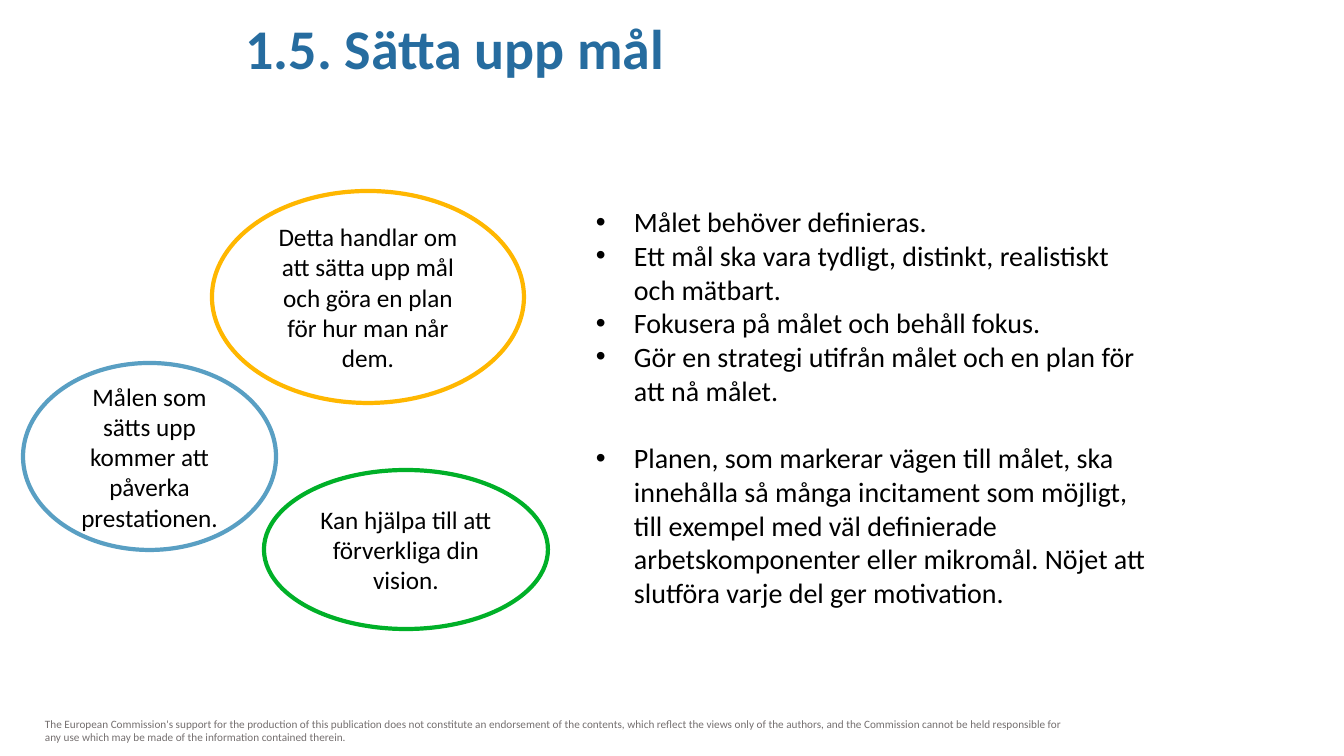
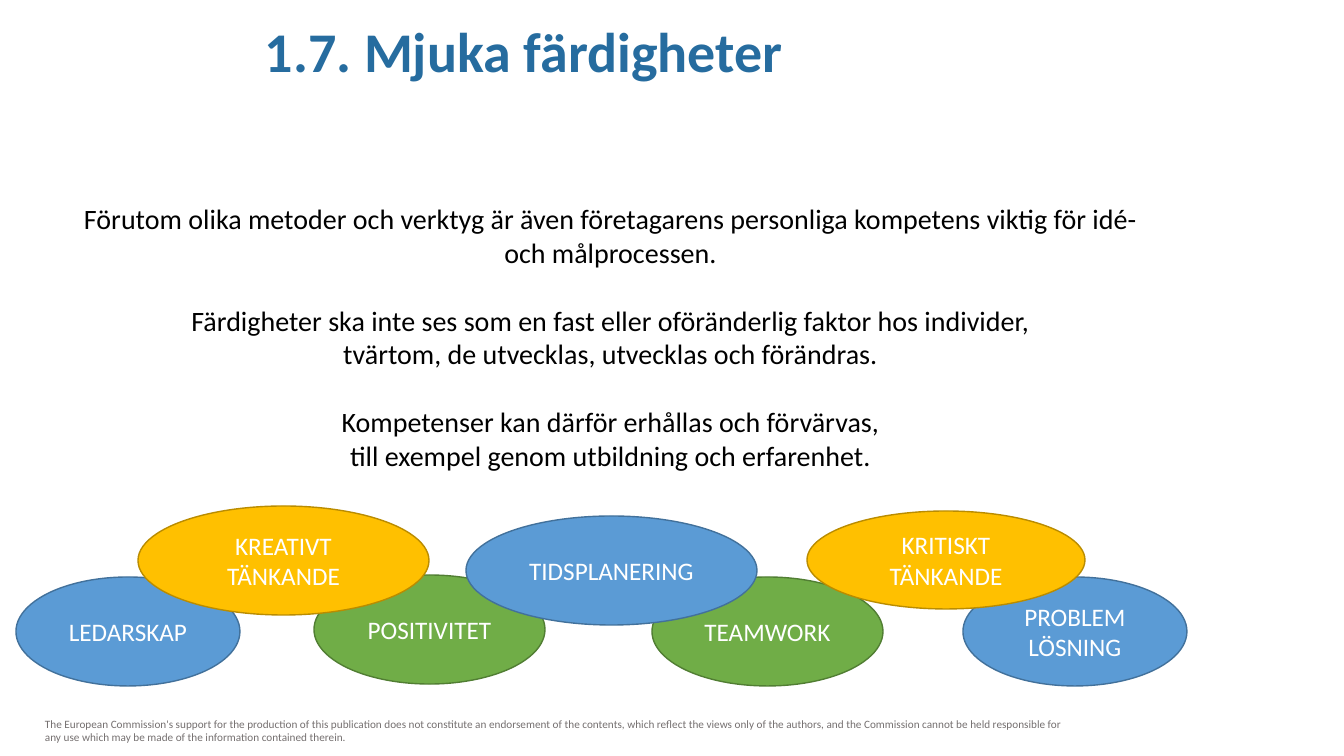
"""Build two Swedish training slides on setting goals and on soft skills."""
from lxml import etree
from pptx import Presentation
from pptx.dml.color import RGBColor
from pptx.enum.shapes import MSO_SHAPE
from pptx.enum.text import MSO_ANCHOR, PP_ALIGN
from pptx.oxml.ns import qn
from pptx.util import Pt

EMU_PER_PX = 914400 / 100.8
SLIDE_SIZE = (1344, 756)
BLANK_LAYOUT = 6
ELLIPSE = MSO_SHAPE.OVAL
MIDDLE = MSO_ANCHOR.MIDDLE
LEFT, CENTER = PP_ALIGN.LEFT, PP_ALIGN.CENTER

FONT = "Calibri"
BODY_SIZE = 20
BODY_GAP = 24.4
BULLET_INDENT = 38
COLORS = {
    "title": "266C9F",
    "text": "000000",
    "footer": "757070",
    "white": "FFFFFF",
    "goal_green": "00B028",
    "goal_blue": "599FC3",
    "goal_yellow": "FFB700",
    "green": "70AD47",
    "green_edge": "517E33",
    "blue": "5B9BD5",
    "blue_edge": "42719B",
    "yellow": "FFC000",
    "yellow_edge": "BA8C00",
}
FOOTER = (
    "The European Commission's support for the production of this publication does not "
    "constitute an endorsement of the contents, which reflect the views only of the authors, "
    "and the Commission cannot be held responsible for any use which may be made of the "
    "information contained therein."
)

GOAL_POINTS = [
    "Målet behöver definieras.",
    "Ett mål ska vara tydligt, distinkt, realistiskt och mätbart.",
    "Fokusera på målet och behåll fokus.",
    "Gör en strategi utifrån målet och en plan för att nå målet.",
    "Planen, som markerar vägen till målet, ska innehålla så många incitament som möjligt, "
    "till exempel med väl definierade arbetskomponenter eller mikromål. Nöjet att slutföra "
    "varje del ger motivation.",
]
GOAL_BUBBLES = [
    ("Kan hjälpa till att förverkliga din vision.", (264, 470, 284, 159), "goal_green"),
    ("Målen som sätts upp kommer att påverka prestationen.", (23, 363, 253, 187), "goal_blue"),
    ("Detta handlar om att sätta upp mål och göra en plan för hur man når dem.",
     (212, 191, 312, 212), "goal_yellow"),
]
SKILL_TEXT = [
    "Förutom olika metoder och verktyg är även företagarens personliga kompetens viktig "
    "för idé- och målprocessen.",
    "Färdigheter ska inte ses som en fast eller oföränderlig faktor hos individer,",
    "tvärtom, de utvecklas, utvecklas och förändras.",
    "Kompetenser kan därför erhållas och förvärvas,",
    "till exempel genom utbildning och erfarenhet.",
]
SKILL_BUBBLES = [
    ("POSITIVITET", (314, 575, 231, 109), "green"),
    ("LEDARSKAP", (16, 577, 224, 109), "blue"),
    ("KREATIVT TÄNKANDE", (138, 506, 291, 109), "yellow"),
    ("TEAMWORK", (652, 577, 231, 109), "green"),
    ("TIDSPLANERING", (466, 516, 291, 109), "blue"),
    ("PROBLEM LÖSNING", (963, 577, 224, 109), "blue"),
    ("KRITISKT TÄNKANDE", (807, 511, 278, 98), "yellow"),
]


def px(length):
    """Turn pixels into EMU."""
    return round(length * EMU_PER_PX)


def rgb(name):
    """Look up a named colour."""
    return RGBColor.from_string(COLORS[name])


def add_bullet(paragraph):
    """Give a paragraph a bullet with a hanging indent."""
    properties = paragraph._p.get_or_add_pPr()
    properties.set("marL", str(px(BULLET_INDENT)))
    properties.set("indent", str(-px(BULLET_INDENT)))
    etree.SubElement(properties, qn("a:buFont")).set("typeface", "Arial")
    etree.SubElement(properties, qn("a:buChar")).set("char", "•")


def write_text(frame, lines, size, color, align=LEFT, bold=False, bullets=False, gaps=()):
    """Fill a text frame, leaving a line's space before the paragraphs in gaps."""
    frame.word_wrap = True
    for index, line in enumerate(lines):
        paragraph = frame.add_paragraph() if index else frame.paragraphs[0]
        paragraph.text = line
        paragraph.alignment = align
        if index in gaps:
            paragraph.space_before = Pt(BODY_GAP)
        if bullets:
            add_bullet(paragraph)
        font = paragraph.font
        font.name = FONT
        font.size = Pt(size)
        font.bold = bold
        font.color.rgb = rgb(color)


def add_text(slide, box, lines, size, color, **style):
    """Add a wrapping text box."""
    frame = slide.shapes.add_textbox(*map(px, box)).text_frame
    write_text(frame, lines, size, color, **style)


def add_bubble(slide, label, box, fill, edge, edge_width, text_color):
    """Add an ellipse with a centred label."""
    bubble = slide.shapes.add_shape(ELLIPSE, *map(px, box))
    bubble.shadow.inherit = False
    bubble.fill.solid()
    bubble.fill.fore_color.rgb = rgb(fill)
    bubble.line.color.rgb = rgb(edge)
    bubble.line.width = Pt(edge_width)
    bubble.text_frame.vertical_anchor = MIDDLE
    write_text(bubble.text_frame, [label], 18, text_color, align=CENTER)


def add_slide(deck, title, title_box, title_align):
    """Add a slide with the shared footer and title style."""
    slide = deck.slides.add_slide(deck.slide_layouts[BLANK_LAYOUT])
    add_text(slide, (35, 712, 1054, 37), [FOOTER], 8, "footer")
    add_text(slide, title_box, [title], 40, "title", align=title_align, bold=True)
    return slide


def build_goals(deck):
    """Build the slide on setting goals."""
    slide = add_slide(deck, "1.5. Sätta upp mål", (146, 9, 618, 78), CENTER)
    add_text(slide, (586, 200, 570, 451), GOAL_POINTS, BODY_SIZE, "text",
             bullets=True, gaps=(4,))
    for label, box, edge in GOAL_BUBBLES:
        add_bubble(slide, label, box, "white", edge, 3, "text")


def build_skills(deck):
    """Build the slide on soft skills."""
    slide = add_slide(deck, "1.7. Mjuka färdigheter", (255, 12, 845, 78), LEFT)
    add_text(slide, (60, 197, 1101, 350), SKILL_TEXT, BODY_SIZE, "text",
             align=CENTER, gaps=(1, 3))
    for label, box, hue in SKILL_BUBBLES:
        add_bubble(slide, label, box, hue, f"{hue}_edge", 1, "white")


def main():
    """Build and save the deck."""
    deck = Presentation()
    deck.slide_width, deck.slide_height = map(px, SLIDE_SIZE)
    build_goals(deck)
    build_skills(deck)
    deck.save("out.pptx")


if __name__ == "__main__":
    main()
